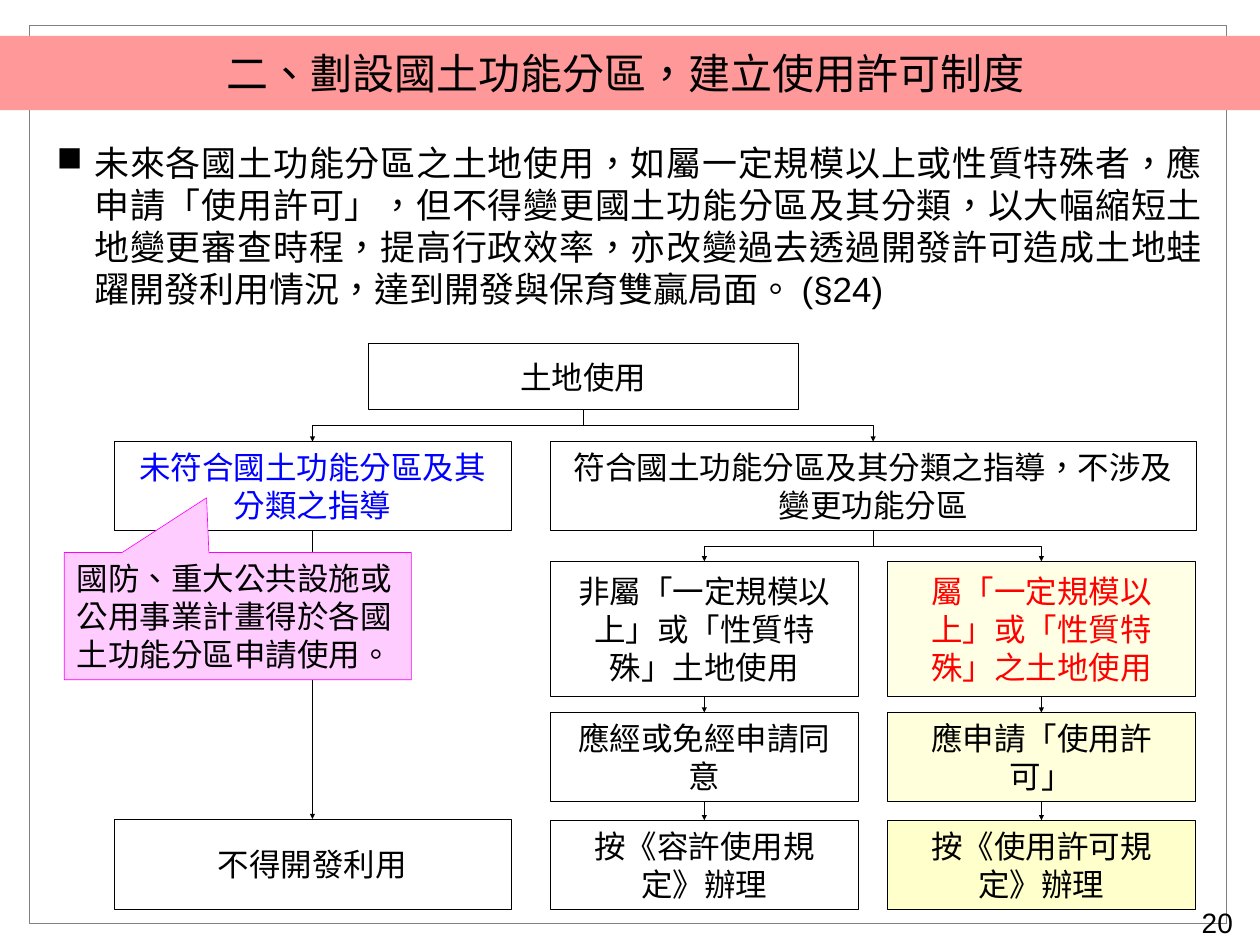
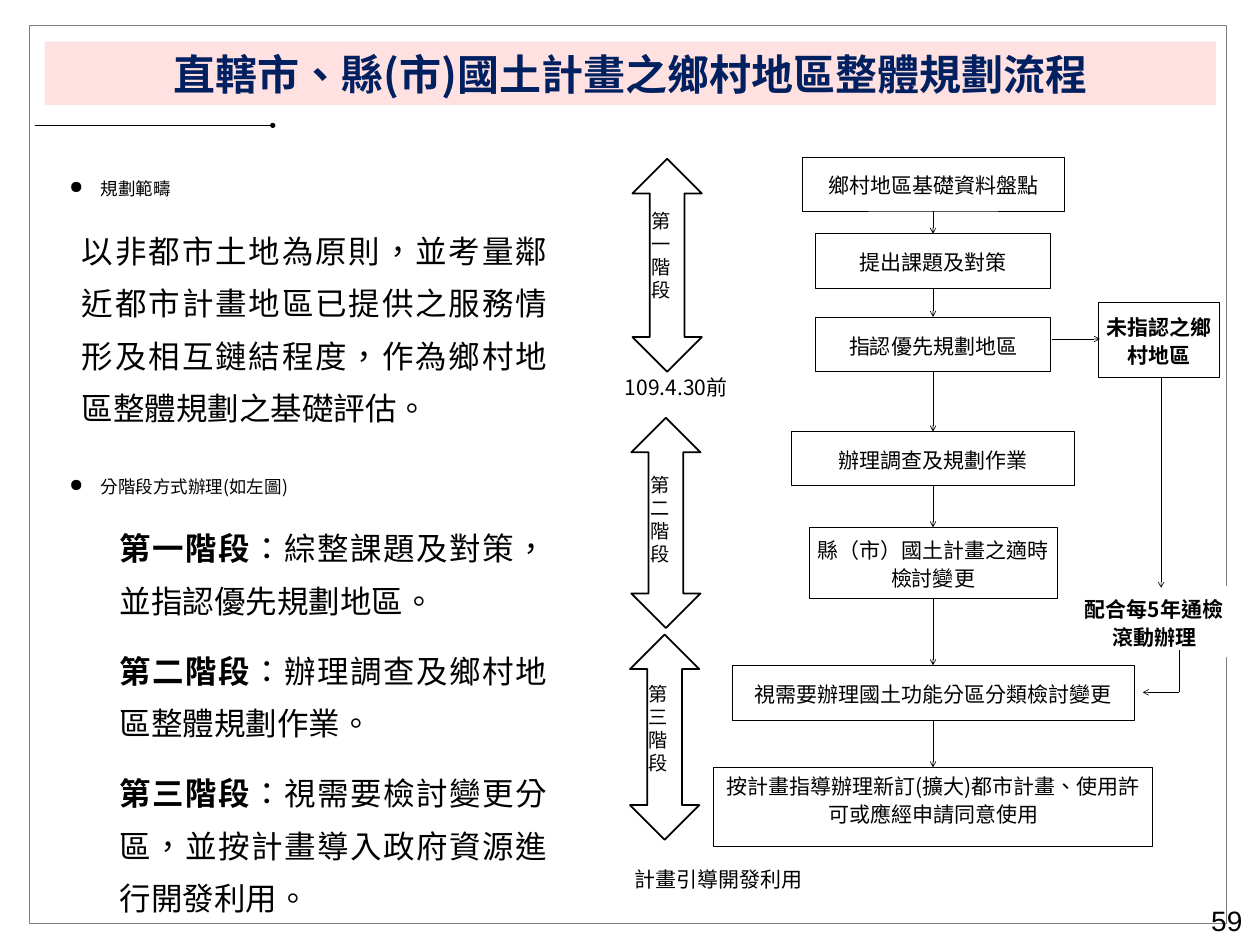
from pptx import Presentation
from pptx.dml.color import RGBColor
from pptx.enum.shapes import MSO_CONNECTOR as LINK, MSO_SHAPE as SHAPE
from pptx.enum.text import MSO_ANCHOR as ANCHOR, PP_ALIGN as ALIGN
from pptx.oxml.ns import qn
from pptx.util import Inches, Pt
from lxml.etree import SubElement

COLORS = {
    "black": "000000", "white": "FFFFFF", "gray": "808080", "navy": "002060",
    "blue": "0000FF", "red": "FF0000", "salmon": "FF9999", "blush": "FFE1E1",
    "yellow": "FFFFCC", "pink": "FFCCFF", "magenta": "FF00FF",
}
SANS = "Noto Sans CJK SC"
WIDE = (0.2, 0.1)
NARROW = (0.1, 0.05)


def place(slide, geometry, at, text="", fill=None, alpha=None, line=None, weight=0.75,
          size=36, font=SANS, color="black", bold=False, align=ALIGN.CENTER,
          anchor=ANCHOR.MIDDLE, inset=WIDE, spacing=None):
    left, top, width, height = [Inches(value) for value in at]
    if geometry is None:
        shape = slide.shapes.add_textbox(left, top, width, height)
    else:
        shape = slide.shapes.add_shape(geometry, left, top, width, height)
        shape.shadow.inherit = False
        if fill:
            shape.fill.solid()
            shape.fill.fore_color.rgb = RGBColor.from_string(COLORS[fill])
            if alpha:
                tint = shape.fill._xPr.find(".//" + qn("a:srgbClr"))
                SubElement(tint, qn("a:alpha"), val=str(alpha * 1000))
        else:
            shape.fill.background()
        if line:
            shape.line.color.rgb = RGBColor.from_string(COLORS[line])
            shape.line.width = Pt(weight)
        else:
            shape.line.fill.background()
    frame = shape.text_frame
    side, edge = [Inches(value) for value in inset]
    frame_format = {
        "word_wrap": True, "vertical_anchor": anchor, "margin_left": side,
        "margin_right": side, "margin_top": edge, "margin_bottom": edge,
    }
    for name, value in frame_format.items():
        setattr(frame, name, value)
    items = [{"runs": [(text, bold)]}] if isinstance(text, str) else text
    for index, item in enumerate(items):
        paragraph = frame.add_paragraph() if index else frame.paragraphs[0]
        points = item.get("size", size)
        paragraph_format = {
            "alignment": align, "level": item.get("level", 0),
            "line_spacing": Pt(spacing or points * 1.2), "space_before": Pt(item.get("before", 0)),
        }
        for name, value in paragraph_format.items():
            setattr(paragraph, name, value)
        properties = paragraph._p.get_or_add_pPr()
        margin, indent = item.get("indent", (0, 0))
        properties.set("marL", str(Inches(margin)))
        properties.set("indent", str(Inches(indent)))
        if "bullet" in item:
            SubElement(properties, qn("a:buChar"), char=item["bullet"])
        for words, strong in item["runs"]:
            if not words:
                continue
            run = paragraph.add_run()
            run.text = words
            for name, value in {"size": Pt(points), "name": font, "bold": strong}.items():
                setattr(run.font, name, value)
            run.font.color.rgb = RGBColor.from_string(COLORS[color])
            run_properties = run._r.get_or_add_rPr()
            run_properties.set("lang", "zh-TW")
            SubElement(run_properties, qn("a:ea"), typeface=SANS)
    return shape


def link(slide, start, end, head="triangle"):
    (x1, y1), (x2, y2) = start, end
    bent = head == "triangle" and x1 != x2
    if bent:
        middle_x, middle_y = (x1 + x2) / 2, (y1 + y2) / 2
        half_drop, half_reach = (y2 - y1) / 2, abs(x2 - x1) / 2
        turn = 1 if x2 < x1 else -1
        x1, x2 = middle_x - turn * half_drop, middle_x + turn * half_drop
        y1, y2 = middle_y - half_reach, middle_y + half_reach
    connector = slide.shapes.add_connector(
        LINK.ELBOW if bent else LINK.STRAIGHT, *[Inches(value) for value in (x1, y1, x2, y2)])
    connector.line.color.rgb = RGBColor.from_string(COLORS["black"])
    connector.line.width = Pt(0.75)
    properties = connector._element.spPr
    if bent:
        properties.find(qn("a:xfrm")).set("rot", "5400000" if turn == 1 else "16200000")
    if head:
        SubElement(connector.line._get_or_add_ln(), qn("a:tailEnd"), type=head)
    SubElement(properties, qn("a:effectLst"))


prs = Presentation()
prs.slide_width, prs.slide_height = Inches(20), Inches(15)
permit, rural = [prs.slides.add_slide(prs.slide_layouts[6]) for _ in range(2)]

border = place(permit, SHAPE.RECTANGLE, (0.46, 0.41, 19, 14.24), line="gray")
prs.slide_master.shapes.element.append(border._element)

headings = [
    (permit, (0, 0.57, 20, 1.18), "二、劃設國土功能分區，建立使用許可制度 ", "salmon", "black", False),
    (rural, (0.71, 0.66, 18.59, 1.01), "直轄市、縣(市)國土計畫之鄉村地區整體規劃流程", "blush", "navy", True),
]
for slide, at, title, band, ink, bold in headings:
    place(slide, SHAPE.RECTANGLE, at, title, fill=band, size=48, color=ink, bold=bold)
for slide, at, number in [(permit, (13.94, 14.27, 5.83, 0.73), "20"),
                          (rural, (18.82, 14.24, 1.1, 0.67), "59")]:
    place(slide, None, at, number, size=32, font="Arial", align=ALIGN.RIGHT, anchor=ANCHOR.TOP)

policy = ("未來各國土功能分區之土地使用，如屬一定規模以上或性質特殊者，應申請「使用許可」，"
          "但不得變更國土功能分區及其分類，以大幅縮短土地變更審查時程，提高行政效率，"
          "亦改變過去透過開發許可造成土地蛙躍開發利用情況，達到開發與保育雙贏局面。 (§24)")
place(permit, None, (0.7, 2.15, 18.59, 2.87),
      [{"runs": [(policy, False)], "indent": (0.6, -0.6), "bullet": "■"}],
      size=40, font="Arial", align=ALIGN.JUSTIFY, anchor=ANCHOR.TOP)

ROOT_X, BARRED_X, ALLOWED_X, EXEMPT_X, LICENSED_X = 9.26, 4.96, 13.86, 11.18, 16.53
permit_steps = [
    (ROOT_X, 5.45, 6.83, 1.05, "土地使用", {}),
    (BARRED_X, 7.01, 6.3, 1.41, "未符合國土功能分區及其分類之指導", {"color": "blue"}),
    (ALLOWED_X, 7.01, 10.26, 1.41, "符合國土功能分區及其分類之指導，不涉及變更功能分區", {}),
    (BARRED_X, 13, 6.3, 1.43, "不得開發利用", {}),
    (EXEMPT_X, 8.91, 4.88, 2.14, "非屬「一定規模以上」或「性質特殊」土地使用", {}),
    (EXEMPT_X, 11.31, 4.88, 1.41, "應經或免經申請同意", {}),
    (EXEMPT_X, 13.02, 4.88, 1.41, "按《容許使用規定》辦理", {}),
    (LICENSED_X, 8.91, 4.88, 2.14, "屬「一定規模以上」或「性質特殊」之土地使用",
     {"fill": "yellow", "alpha": 50, "color": "red"}),
    (LICENSED_X, 11.31, 4.88, 1.41, "應申請「使用許可」", {"fill": "yellow", "alpha": 70}),
    (LICENSED_X, 13.02, 4.88, 1.41, "按《使用許可規定》辦理", {"fill": "yellow"}),
]
for center, top, width, height, step, look in permit_steps:
    place(permit, SHAPE.RECTANGLE, (center - width / 2, top, width, height), step,
          line="black", **look)

for parent, child, top, bottom in [
    (ROOT_X, BARRED_X, 6.5, 7.01), (ROOT_X, ALLOWED_X, 6.5, 7.01),
    (ALLOWED_X, EXEMPT_X, 8.42, 8.91), (ALLOWED_X, LICENSED_X, 8.42, 8.91),
    (BARRED_X, BARRED_X, 8.42, 13),
    (EXEMPT_X, EXEMPT_X, 11.05, 11.31), (EXEMPT_X, EXEMPT_X, 12.72, 13.02),
    (LICENSED_X, LICENSED_X, 11.05, 11.31), (LICENSED_X, LICENSED_X, 12.72, 13.02),
]:
    link(permit, (parent, top), (child, bottom))

exception = place(permit, SHAPE.RECTANGULAR_CALLOUT, (1.02, 8.77, 5.51, 2.02),
                  "國防、重大公共設施或公用事業計畫得於各國土功能分區申請使用。",
                  fill="pink", line="magenta", font="Arial", align=ALIGN.LEFT)
exception.adjustments[0], exception.adjustments[1] = -0.09, -0.93

topic = {"size": 20, "indent": (0.7, -0.5), "bullet": "●", "before": 20}
scope = ("以非都市土地為原則，並考量鄰近都市計畫地區已提供之服務情形及相互鏈結程度，"
         "作為鄉村地區整體規劃之基礎評估。")
outline = [
    {**topic, "runs": [("規劃範疇", False)]},
    {"runs": [(scope, False)], "indent": (0.4, 0), "before": 20},
    {**topic, "runs": [("分階段方式辦理(如左圖)", False)]},
]
for phase, task in [
    ("第一階段", "：綜整課題及對策，並指認優先規劃地區。"),
    ("第二階段", "：辦理調查及鄉村地區整體規劃作業。"),
    ("第三階段", "：視需要檢討變更分區，並按計畫導入政府資源進行開發利用。"),
]:
    outline.append({"runs": [(phase, True), (task, False)], "level": 1,
                    "indent": (1, 0), "before": 20})
place(rural, None, (0.7, 2.23, 8.19, 12.35), outline, spacing=60,
      align=ALIGN.JUSTIFY, anchor=ANCHOR.TOP)
link(rural, (0.55, 1.99), (4.33, 1.99), "oval")

note = {"align": ALIGN.LEFT, "anchor": ANCHOR.TOP, "inset": NARROW}
for left, top, height, label_top, phase in [
    (10.04, 2.52, 3.38, 3.27, "第一階段"),
    (10.02, 6.63, 3.34, 7.46, "第二階段"),
    (10, 10.07, 3.26, 10.78, "第三階段"),
]:
    place(rural, SHAPE.UP_DOWN_ARROW, (left, top, 1.1, height), fill="white", line="black", weight=2)
    place(rural, None, (left + 0.2, label_top, 0.78, 2.28), phase, size=22, font="Calibri", **note)
for left, top, milestone in [(9.82, 5.9, "109.4.30前"), (9.97, 13.71, "計畫引導開發利用")]:
    place(rural, None, (left, top, 3.22, 0.6), milestone, size=24, **note)

FLOW_X = 14.81
flow = [
    (2.49, 4.15, 0.86, "鄉村地區基礎資料盤點"),
    (3.71, 3.73, 0.86, "提出課題及對策"),
    (5.03, 3.73, 0.87, "指認優先規劃地區"),
    (6.85, 4.49, 0.86, "辦理調查及規劃作業"),
    (8.37, 3.93, 1.12, "縣（市）國土計畫之適時檢討變更"),
    (10.56, 6.39, 0.87, "視需要辦理國土功能分區分類檢討變更"),
    (12.18, 6.97, 1.25, "按計畫指導辦理新訂(擴大)都市計畫、使用許可或應經申請同意使用"),
]
step_look = {"fill": "white", "weight": 0.5, "size": 24, "inset": NARROW, "spacing": 32}
for index, (top, width, height, step) in enumerate(flow):
    place(rural, SHAPE.RECTANGLE, (FLOW_X - width / 2, top, width, height), step, line="black",
          anchor=ANCHOR.TOP if step == flow[-1][-1] else ANCHOR.MIDDLE, **step_look)
    if index:
        above_top, _, above_height, _ = flow[index - 1]
        link(rural, (FLOW_X, above_top + above_height), (FLOW_X, top), "arrow")

for at, step, edge in [((17.43, 4.79, 1.93, 1.19), "未指認之鄉村地區", "black"),
                       ((17.05, 9.3, 2.54, 1.13), "配合每5年通檢滾動辦理", None)]:
    place(rural, SHAPE.RECTANGLE, at, step, line=edge, bold=True, **step_look)
for start, end, head in [
    ((16.7, 5.38), (17.46, 5.38), "arrow"),
    ((18.43, 5.99), (18.43, 9.33), "arrow"),
    ((18.72, 10.32), (18.72, 10.99), None),
    ((18.72, 10.99), (18.14, 10.99), "arrow"),
]:
    link(rural, start, end, head)

prs.save("out.pptx")
